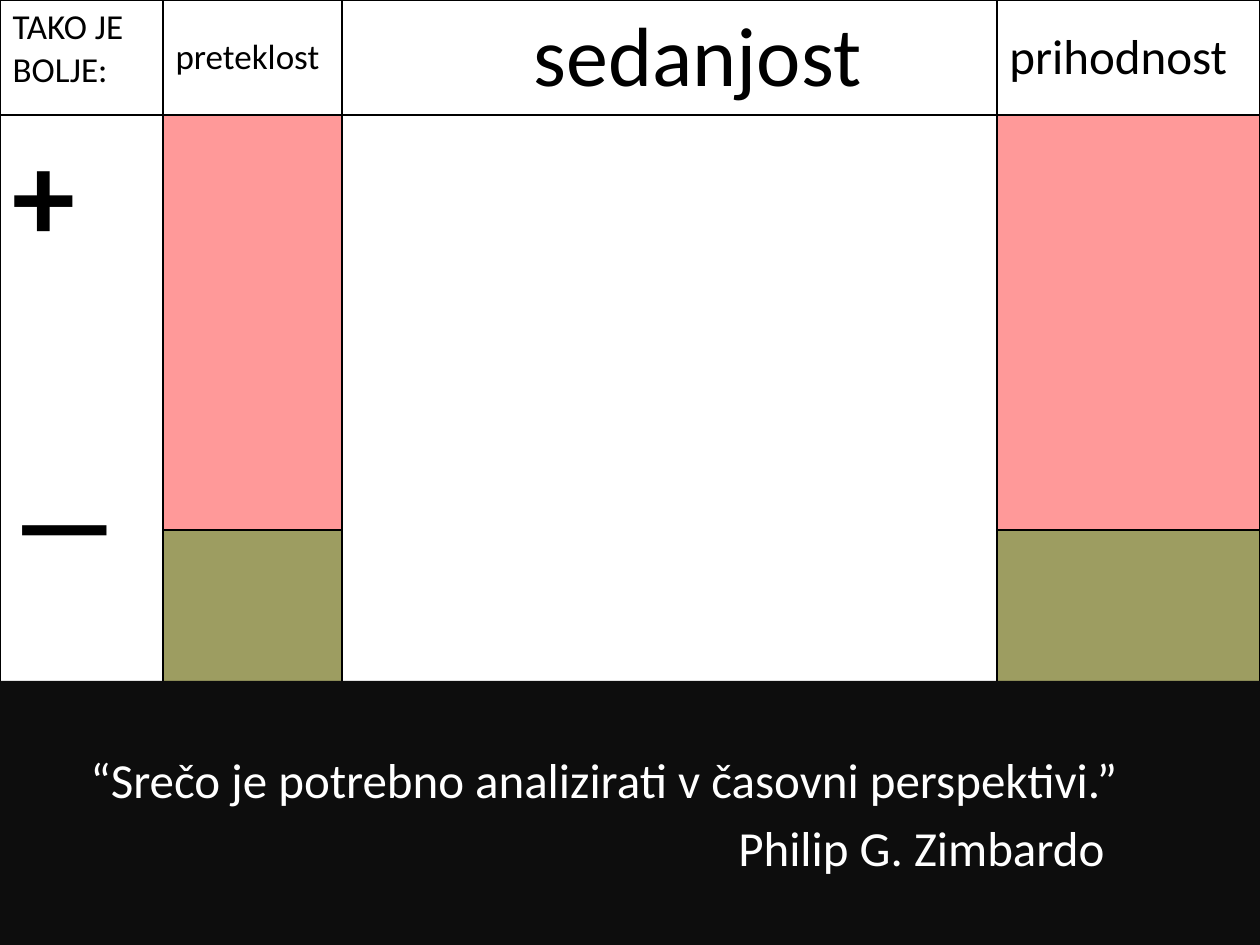
"""Build a slide with a time-perspective table above a quotation band."""
from lxml import etree
from pptx import Presentation
from pptx import util as u
from pptx.dml.color import RGBColor
from pptx.enum import shapes, text
from pptx.oxml import ns

PX = 914400 // 126
BLACK, WHITE, PINK, OLIVE, BAND = "000000", "FFFFFF", "FF9999", "9D9D61", "0D0D0D"


def paint(target, color):
    target.solid()
    target.fore_color.rgb = RGBColor.from_string(color)


def write(paragraph, words, size, color=BLACK):
    paragraph.text = words
    paragraph.font.name = "Calibri"
    paragraph.font.size = u.Pt(size)
    paint(paragraph.font.fill, color)


presentation = Presentation()
presentation.slide_width = 1260 * PX
presentation.slide_height = 945 * PX
slide = presentation.slides.add_slide(presentation.slide_layouts[6])

columns = [163, 179, 655, 263]
rows = [115, 415, 265]
table = slide.shapes.add_table(3, 4, 0, 0, sum(columns) * PX, sum(rows) * PX).table
table.first_row = False
table.horz_banding = False
for column, width in zip(table.columns, columns):
    column.width = width * PX
for row, height in zip(table.rows, rows):
    row.height = height * PX

fills = [[WHITE] * 4, [WHITE, PINK, WHITE, PINK], [WHITE, OLIVE, WHITE, OLIVE]]
for row_index, colors in enumerate(fills):
    for column_index, color in enumerate(colors):
        cell = table.cell(row_index, column_index)
        paint(cell.fill, color)
        properties = cell._tc.get_or_add_tcPr()
        for position, side in enumerate(("lnL", "lnR", "lnT", "lnB")):
            border = etree.Element(ns.qn(f"a:{side}"), w=str(u.Pt(1)))
            solid = etree.SubElement(border, ns.qn("a:solidFill"))
            etree.SubElement(solid, ns.qn("a:srgbClr"), val=BLACK)
            properties.insert(position, border)

headings = [("TAKO JE BOLJE:", 20), ("preteklost", 20), ("sedanjost", 48), ("prihodnost", 28)]
for index, (words, size) in enumerate(headings):
    cell = table.cell(0, index)
    write(cell.text_frame.paragraphs[0], words, size)
    if index:
        cell.vertical_anchor = text.MSO_ANCHOR.MIDDLE
present = table.cell(0, 2)
present.margin_left = 69 * PX
present.text_frame.paragraphs[0].alignment = text.PP_ALIGN.CENTER

for index in (0, 2):
    table.cell(1, index).merge(table.cell(2, index))
scale = table.cell(1, 0).text_frame
plus, minus = scale.paragraphs[0], scale.add_paragraph()
write(plus, "+", 72)
write(minus, "—", 66)
plus.font.bold = minus.font.bold = True
minus.space_before = u.Pt(102)

band = slide.shapes.add_shape(shapes.MSO_SHAPE.RECTANGLE, 0, 681 * PX, 1260 * PX, 264 * PX)
band.shadow.inherit = False
paint(band.fill, BAND)
band.line.fill.background()
frame = band.text_frame
frame.word_wrap = True
frame.vertical_anchor = text.MSO_ANCHOR.MIDDLE
quotation = [
    ("“Srečo je potrebno analizirati v časovni perspektivi.”", 78),
    ("Philip G. Zimbardo", 726),
]
for index, (words, indent) in enumerate(quotation):
    paragraph = frame.add_paragraph() if index else frame.paragraphs[0]
    write(paragraph, words, 28, WHITE)
    paragraph.alignment = text.PP_ALIGN.LEFT
    paragraph.space_before = u.Pt(5.6)
    paragraph._p.get_or_add_pPr().set("marL", str(indent * PX))

presentation.save("out.pptx")
